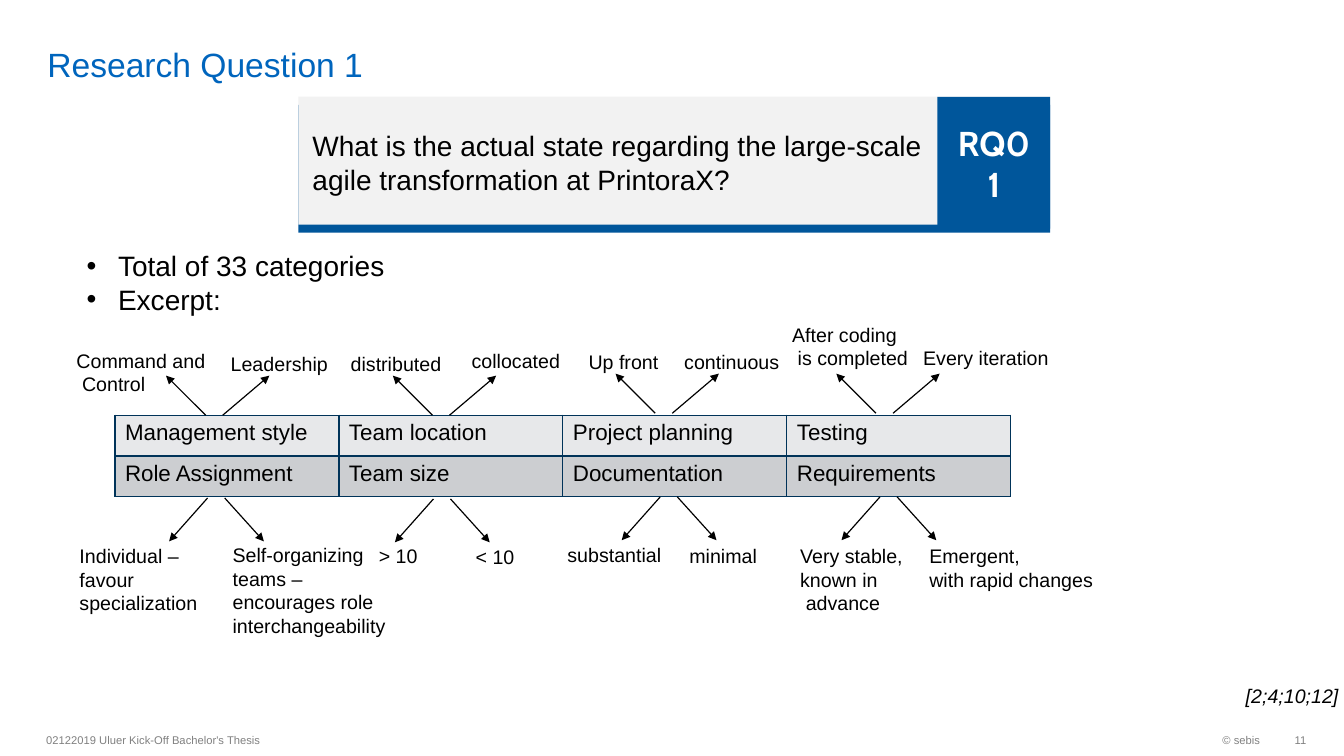
from dataclasses import dataclass

from lxml.etree import SubElement
from pptx import Presentation
from pptx.dml.color import RGBColor
from pptx.enum.shapes import MSO_CONNECTOR, MSO_SHAPE
from pptx.enum.text import MSO_ANCHOR as Anchor, PP_ALIGN as Align
from pptx.oxml import parse_xml
from pptx.oxml.ns import nsdecls, qn
from pptx.util import Pt


@dataclass(frozen=True)
class Theme:
    font: str = "Arial"
    badge_font: str = "Cabin"
    title: str = "0065BD"
    blue: str = "00569B"
    panel: str = "F2F2F2"
    ink: str = "000000"
    white: str = "FFFFFF"
    muted: str = "808080"
    border: str = "003359"
    rows: tuple = ("E7E8EA", "CCCED1")
    title_size: float = 24
    badge_size: float = 24.6
    body_size: float = 20
    cell_size: float = 16
    label_size: float = 14
    footer_size: float = 8


@dataclass(frozen=True)
class Box:
    left: float
    top: float
    width: float
    height: float

    @property
    def lengths(self):
        return [Pt(value) for value in (self.left, self.top, self.width, self.height)]

    def inner(self, left, top, width, height):
        return Box(self.left + left, self.top + top, width, height)


THEME = Theme()
CELLS = (("Management style", "Team location", "Project planning", "Testing"),
         ("Role Assignment", "Team size", "Documentation", "Requirements"))

# Arrow pairs: start of the left arrow, measured from the table edge they leave.
FANS_ABOVE = ((64.8, 0), (226.8, 0), (385.9, -1.4), (543.6, -1.4))
FANS_BELOW = ((66.2, 0.8), (227.5, 1.5), (389.5, 0), (546.5, 0))
FAN_GAP = 12.2

# Labels: left, top, width, lines and the indent of the last line.
LABELS_ABOVE = (
    (-34.6, -51.1, 107, ("Command and", "Control"), 4),
    (75.6, -49, 84, ("Leadership",), 0),
    (161.3, -49, 79, ("distributed",), 0),
    (247.7, -51.1, 78, ("collocated",), 0),
    (331.2, -50.4, 65, ("Up front",), 0),
    (399.6, -50.4, 83, ("continuous",), 0),
    (476.6, -69.8, 98, ("After coding", "is completed"), 4),
    (570.2, -53.3, 104, ("Every iteration",), 0),
)
LABELS_BELOW = (
    (-32.4, 30.3, 99, ("Individual –", "favour", "specialization"), 0),
    (77, 29.5, 125,
     ("Self-organizing", "teams –", "encourages role", "interchangeability"), 0),
    (181.4, 30.3, 42, ("> 10",), 0),
    (250.6, 30.8, 42, ("< 10",), 0),
    (316.1, 29.5, 82, ("substantial",), 0),
    (403.2, 30.3, 63, ("minimal",), 0),
    (482.4, 30.3, 92, ("Very stable,", "known in", "advance"), 4),
    (574.6, 30.3, 132, ("Emergent,", "with rapid changes"), 0),
)


def color(value):
    return RGBColor.from_string(value)


def add_run(paragraph, text, size, ink=THEME.ink, font=THEME.font, bold=False, italic=False):
    run = paragraph.add_run()
    run.text = text
    run.font.name, run.font.size = font, Pt(size)
    run.font.bold, run.font.italic = bold, italic
    run.font.color.rgb = color(ink)


def add_text(shapes, box, lines, size, anchor=Anchor.TOP, align=Align.LEFT, wrap=True, **style):
    """Add a text box with one paragraph per line and return its text frame."""
    frame = shapes.add_textbox(*box.lengths).text_frame
    frame.word_wrap, frame.vertical_anchor = wrap, anchor
    for index, line in enumerate(lines):
        paragraph = frame.add_paragraph() if index else frame.paragraphs[0]
        paragraph.alignment = align
        add_run(paragraph, line, size, **style)
    return frame


def add_panel(shapes, box, fill):
    shape = shapes.add_shape(MSO_SHAPE.RECTANGLE, *box.lengths)
    shape.shadow.inherit = False
    shape.fill.solid()
    shape.fill.fore_color.rgb = color(fill)
    shape.line.fill.background()


def add_arrow(shapes, start, end):
    arrow = shapes.add_connector(MSO_CONNECTOR.STRAIGHT, *(Pt(v) for v in (*start, *end)))
    arrow.line.color.rgb = color(THEME.ink)
    arrow.line.width = Pt(0.85)
    SubElement(arrow.line._get_or_add_ln(), qn("a:tailEnd"), type="triangle")
    SubElement(arrow._element.spPr, qn("a:effectLst"))


def add_title(slide, box):
    title = slide.shapes.title
    title.left, title.top, title.width, title.height = box.lengths
    frame = title.text_frame
    frame.vertical_anchor = Anchor.BOTTOM
    frame.margin_top = frame.margin_bottom = 0
    frame.paragraphs[0].alignment = Align.LEFT
    add_run(frame.paragraphs[0], "Research Question 1", THEME.title_size, THEME.title)


def add_question(slide, box):
    shapes = slide.shapes.add_group_shape().shapes
    badge_left = box.width - 80.6
    add_panel(shapes, box.inner(0, 5.8, box.width, 91.4), THEME.blue)
    add_panel(shapes, box.inner(0, 0, box.width, 91.4), THEME.panel)
    add_panel(shapes, box.inner(badge_left, 0, 80.6, 94.3), THEME.blue)
    add_text(shapes, box.inner(badge_left + 3.6, 24.5, 73.4, 46), ["RQ01"], THEME.badge_size,
             Anchor.MIDDLE, Align.CENTER, ink=THEME.white, font=THEME.badge_font, bold=True)
    question = ("What is the actual state regarding the large-scale "
                "agile transformation at PrintoraX?")
    add_text(shapes, box.inner(3, 12.2, 450.7, 69), [question], THEME.body_size, Anchor.MIDDLE)


def add_bullets(slide, box):
    frame = add_text(slide.shapes, box, ["Total of 33 categories", "Excerpt:"],
                     THEME.body_size, wrap=False)
    for paragraph in frame.paragraphs:
        properties = paragraph._p.get_or_add_pPr()
        properties.set("marL", str(Pt(22.5)))
        properties.set("indent", str(-Pt(22.5)))
        SubElement(properties, qn("a:buFont"), typeface=THEME.font)
        SubElement(properties, qn("a:buChar"), char="•")


def set_borders(cell):
    properties = cell._tc.get_or_add_tcPr()
    for index, side in enumerate("LRTB"):
        properties.insert(index, parse_xml(
            f'<a:ln{side} {nsdecls("a")} w="{Pt(1)}"><a:solidFill>'
            f'<a:srgbClr val="{THEME.border}"/></a:solidFill></a:ln{side}>'))


def add_category_table(slide, box):
    table = slide.shapes.add_table(len(CELLS), len(CELLS[0]), *box.lengths).table
    for row, texts in enumerate(CELLS):
        for column, text in enumerate(texts):
            cell = table.cell(row, column)
            cell.fill.solid()
            cell.fill.fore_color.rgb = color(THEME.rows[row])
            set_borders(cell)
            add_run(cell.text_frame.paragraphs[0], text, THEME.cell_size)


def add_extremes(slide, box, fans, labels, left_reach, right_reach, rise):
    """Add arrow pairs and labels measured from the top left corner of the box."""
    for x, y in fans:
        start_x, start_y = box.left + x, box.top + y
        for offset, reach in ((0, -left_reach), (FAN_GAP, right_reach)):
            tail = start_x + offset
            add_arrow(slide.shapes, (tail, start_y), (tail + reach, start_y + rise))
    for left, top, width, lines, indent in labels:
        place = box.inner(left, top, width, 7.2 + 17 * len(lines))
        frame = add_text(slide.shapes, place, lines, THEME.label_size, wrap=False)
        if indent:
            frame.paragraphs[-1]._p.get_or_add_pPr().set("marL", str(Pt(indent)))


def add_footer(slide, box):
    style = dict(size=THEME.footer_size, anchor=Anchor.MIDDLE, ink=THEME.muted)
    shapes = slide.shapes
    add_text(shapes, box.inner(0, 0, 453.6, box.height),
             ["02122019 Uluer Kick-Off Bachelor's Thesis"], **style)
    add_text(shapes, box.inner(box.width - 194.4, 0, 168.5, box.height), ["© sebis"],
             align=Align.RIGHT, **style)
    number = add_text(shapes, box.inner(box.width - 25.9, 0, 25.9, box.height), ["11"],
                      align=Align.RIGHT, **style)
    number.margin_right = 0


def main():
    presentation = Presentation()
    presentation.slide_width, presentation.slide_height = Pt(960), Pt(540)
    slide = presentation.slides.add_slide(presentation.slide_layouts[5])
    table_box = Box(82.1, 296.6, 640, 58.3)
    below_box = table_box.inner(0, table_box.height, table_box.width, 100)
    add_title(slide, Box(26.6, 3.6, 833.8, 56.9))
    add_bullets(slide, Box(54.7, 174.2, 229, 77.8))
    add_category_table(slide, table_box)
    add_extremes(slide, table_box, FANS_ABOVE, LABELS_ABOVE, 28.3, 33.3, -28.3)
    add_extremes(slide, below_box, FANS_BELOW, LABELS_BELOW, 27.5, 28, 31)
    add_question(slide, Box(213.1, 69.1, 537.1, 97.2))
    add_text(slide.shapes, Box(882.7, 485.3, 94.3, 24.5), ["[2;4;10;12]"],
             THEME.label_size, italic=True)
    add_footer(slide, Box(25.9, 517.3, 907.2, 22.7))
    presentation.save("out.pptx")


if __name__ == "__main__":
    main()
